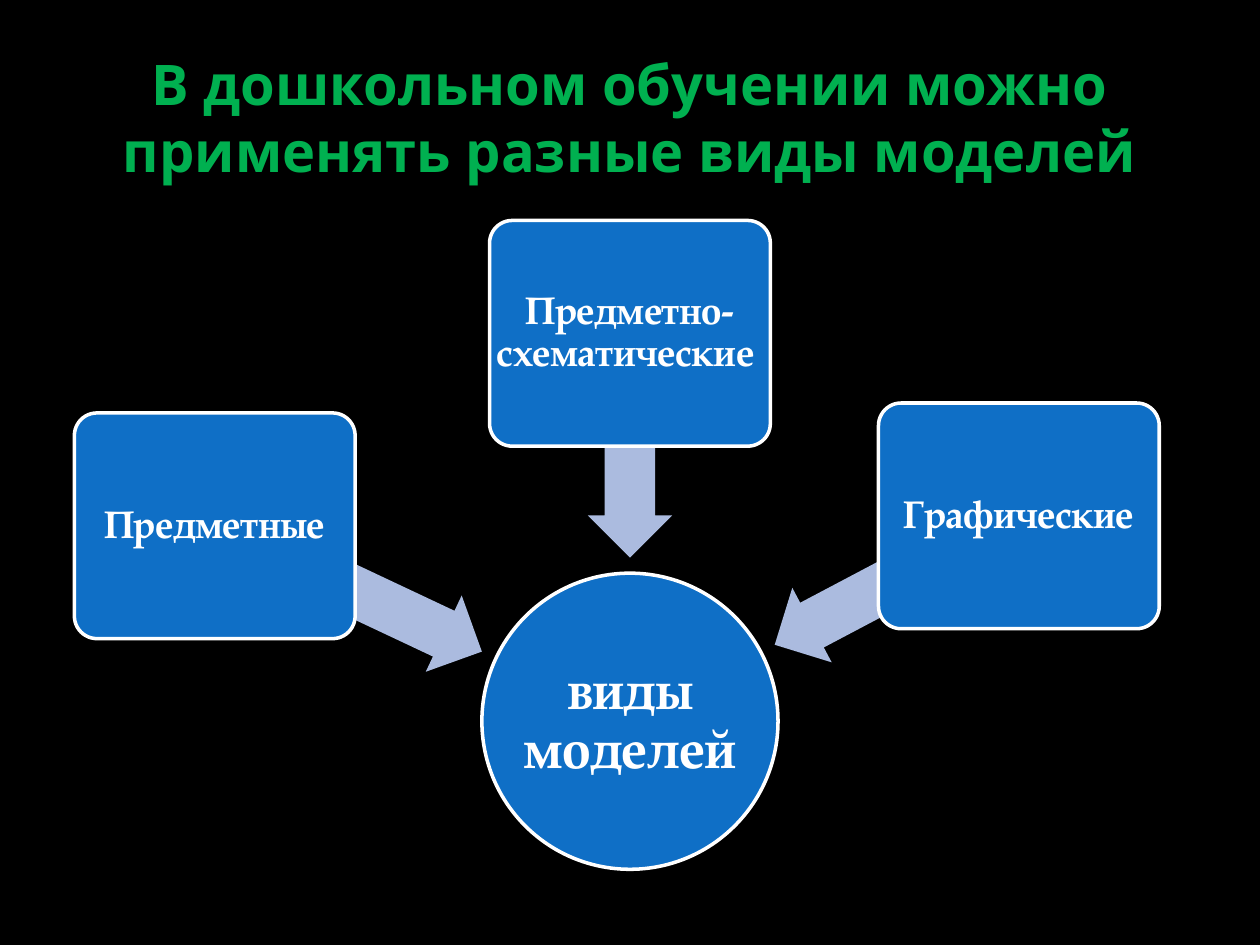
from dataclasses import dataclass
from math import atan2, degrees, hypot

from pptx import Presentation
from pptx.dml.color import RGBColor as RGB
from pptx.enum.shapes import MSO_SHAPE as Kind
from pptx.enum.text import MSO_ANCHOR as Anchor, PP_ALIGN as Align
from pptx.util import Cm, Pt

TITLE = "В дошкольном обучении можно применять разные виды моделей"
HUB = "виды моделей"
# Text, then the centre of its box in cm
TYPES = [
    ("Предметные", 4.33, 10.6),
    ("Предметно-схематические ", 12.7, 6.72),
    ("Графические", 20.54, 10.4),
]

HUB_X, HUB_Y, HUB_D = 12.7, 14.54, 5.97
BOX_W, BOX_H = 5.66, 4.55
ARROW_H = 1.7
REACH = 3.3  # from hub centre to arrow tip


@dataclass
class Theme:
    back: str = "000000"
    title: str = "00B050"
    fill: str = "0F6FC6"
    arrow: str = "ABBBDF"
    white: str = "FFFFFF"
    head: str = "Open Sans"
    body: str = "TeX Gyre Pagella"
    big: int = 32
    mid: int = 31
    small: int = 22
    edge: int = 2


T = Theme()


def frame(x, y, w, h):
    """Turn a centre and a size in cm into left, top, width, height."""
    return Cm(x - w / 2), Cm(y - h / 2), Cm(w), Cm(h)


def draw(slide, kind, area, fill, edge=None):
    shape = slide.shapes.add_shape(kind, *area)
    shape.shadow.inherit = False
    shape.fill.solid()
    shape.fill.fore_color.rgb = RGB.from_string(fill)
    if edge:
        shape.line.color.rgb = RGB.from_string(edge)
        shape.line.width = Pt(T.edge)
    else:
        shape.line.fill.background()
    return shape


def write(shape, text, font, size, color, inset=0, pitch=0.9):
    box = shape.text_frame
    box.text = text
    box.word_wrap = True
    box.vertical_anchor = Anchor.MIDDLE
    box.margin_left = box.margin_right = Cm(inset)
    box.margin_top = box.margin_bottom = Cm(inset)
    para = box.paragraphs[0]
    para.alignment = Align.CENTER
    para.line_spacing = pitch
    face = para.runs[0].font
    face.name, face.size, face.bold = font, Pt(size), True
    face.color.rgb = RGB.from_string(color)


def point(slide, x, y):
    """Draw an arrow from a box centre towards the hub."""
    dx, dy = HUB_X - x, HUB_Y - y
    dist = hypot(dx, dy)
    size = dist - REACH
    part = size / dist / 2
    area = frame(x + dx * part, y + dy * part, size, ARROW_H)
    arrow = draw(slide, Kind.LEFT_ARROW, area, T.arrow)
    arrow.adjustments[0], arrow.adjustments[1] = 0.6, 0.5
    arrow.rotation = degrees(atan2(dy, dx)) + 180


def main():
    deck = Presentation()
    deck.slide_width, deck.slide_height = Cm(25.4), Cm(19.05)
    slide = deck.slides.add_slide(deck.slide_layouts[6])
    slide.background.fill.solid()
    slide.background.fill.fore_color.rgb = RGB.from_string(T.back)

    title = slide.shapes.add_textbox(*frame(12.7, 2.35, 22.86, 3.18))
    write(title, TITLE, T.head, T.big, T.title, inset=0.2, pitch=1.0)

    # The label is wider than the text area inside an ellipse
    area = frame(HUB_X, HUB_Y, HUB_D, HUB_D)
    draw(slide, Kind.OVAL, area, T.fill, T.white)
    label = slide.shapes.add_textbox(*area)
    write(label, HUB, T.body, T.mid, T.white, inset=0.05)

    for text, x, y in TYPES:
        point(slide, x, y)
        area = frame(x, y, BOX_W, BOX_H)
        box = draw(slide, Kind.ROUNDED_RECTANGLE, area, T.fill, T.white)
        box.adjustments[0] = 0.1
        write(box, text, T.body, T.small, T.white)

    deck.save("out.pptx")


if __name__ == "__main__":
    main()
